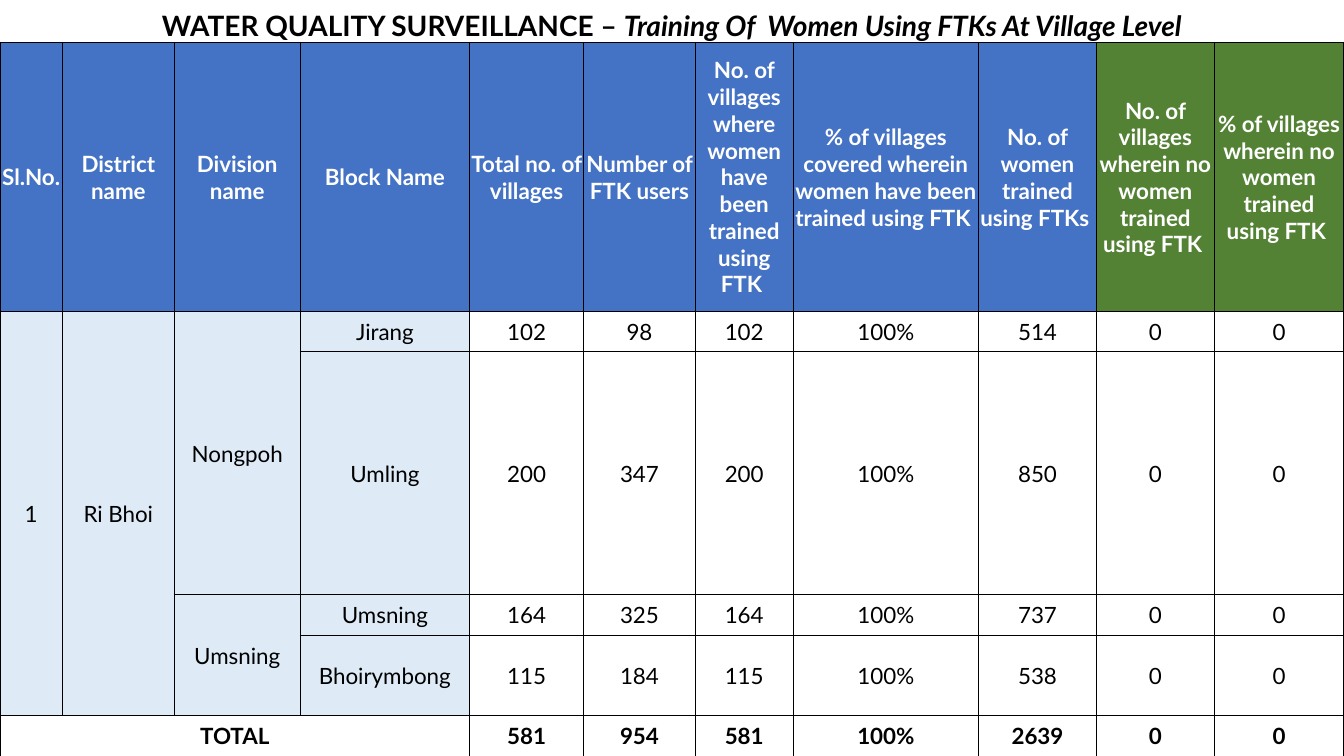
from lxml.etree import SubElement
from pptx import Presentation
from pptx.dml.color import RGBColor
from pptx.enum.text import MSO_ANCHOR, PP_ALIGN
from pptx.oxml.ns import qn
from pptx.util import Pt

FONT = "Lato"
BLACK, WHITE = "000000", "FFFFFF"
BLUE, GREEN, PALE_BLUE = "4472C4", "548235", "DEEBF7"

COLUMN_WIDTHS = [44.6, 79.9, 90, 121, 81.4, 79.9, 69.8, 132.5, 84.2, 84.2, 92.5]
ROW_HEIGHTS = [30.2, 192.2, 28.8, 173.5, 28.8, 57.7, 28.8]
TITLE_ROW, HEADER_ROW, FIRST_BLOCK_ROW, TOTAL_ROW = 0, 1, 2, 6
FIRST_FIGURE_COLUMN, FIRST_UNTRAINED_COLUMN = 4, 9

HEADERS = [
    "Sl.No.", "District name", "Division name", "Block Name",
    "Total no. of villages", "Number of FTK users",
    "No. of villages where women have been trained using FTK ",
    "% of villages covered wherein women have been trained using FTK ",
    "No. of women trained using FTKs ",
    "No. of villages wherein no women trained using FTK ",
    "% of villages wherein no women trained using FTK ",
]
BLOCKS = [
    ["1", "Ri Bhoi", "Nongpoh", "Jirang", "102", "98", "102", "100%", "514", "0", "0"],
    ["", "", "", "Umling", "200", "347", "200", "100%", "850", "0", "0"],
    ["", "", "Umsning", "Umsning", "164", "325", "164", "100%", "737", "0", "0"],
    ["", "", "", "Bhoirymbong", "115", "184", "115", "100%", "538", "0", "0"],
]
TOTALS = ["TOTAL", "", "", "", "581", "954", "581", "100%", "2639", "0", "0"]
# First and last cell of each merged area, as (row, column)
MERGED_AREAS = [
    ((0, 0), (0, 10)),
    ((2, 0), (5, 0)),
    ((2, 1), (5, 1)),
    ((2, 2), (3, 2)),
    ((4, 2), (5, 2)),
    ((6, 0), (6, 3)),
]


def rgb(color):
    return RGBColor.from_string(color)


def add_run(paragraph, text, size, color, bold=False, italic=False):
    run = paragraph.add_run()
    run.text = text
    font = run.font
    font.name, font.size = FONT, Pt(size)
    font.bold, font.italic = bold, italic
    font.color.rgb = rgb(color)


def add_borders(cell, sides):
    """Draw thin black lines on the given sides, listed in the order L, R, T, B."""
    properties = cell._tc.get_or_add_tcPr()
    for side in "LRTB":
        line = SubElement(properties, qn(f"a:ln{side}"), w=str(Pt(0.5)))
        if side in sides:
            fill = SubElement(line, qn("a:solidFill"))
            SubElement(fill, qn("a:srgbClr"), val=BLACK)
        else:
            SubElement(line, qn("a:noFill"))


def format_cell(cell, fill, sides="LRTB", anchor=MSO_ANCHOR.MIDDLE):
    """Apply borders before the fill, as the file format orders them."""
    add_borders(cell, sides)
    cell.fill.solid()
    cell.fill.fore_color.rgb = rgb(fill)
    cell.margin_left = cell.margin_right = cell.margin_top = Pt(0.7)
    cell.margin_bottom = Pt(0)
    cell.vertical_anchor = anchor
    cell.text_frame.paragraphs[0].alignment = PP_ALIGN.CENTER


def fill_title(table):
    for column in range(len(COLUMN_WIDTHS)):
        format_cell(table.cell(TITLE_ROW, column), WHITE, "B", MSO_ANCHOR.BOTTOM)
    title = table.cell(TITLE_ROW, 0).text_frame.paragraphs[0]
    add_run(title, "WATER QUALITY SURVEILLANCE – ", 20, BLACK, bold=True)
    add_run(title, "Training Of  Women Using FTKs At Village Level", 20, BLACK,
            bold=True, italic=True)


def fill_row(table, row, texts, left_fill, right_fill, split, color=BLACK, bold=False):
    """Fill one row; the cell colour changes at column number split."""
    for column, text in enumerate(texts):
        cell = table.cell(row, column)
        format_cell(cell, left_fill if column < split else right_fill)
        if text:
            add_run(cell.text_frame.paragraphs[0], text, 16, color, bold)


def add_training_table(slide):
    table = slide.shapes.add_table(
        len(ROW_HEIGHTS), len(COLUMN_WIDTHS), Pt(0), Pt(0), Pt(960), Pt(540)
    ).table
    table.first_row = table.horz_banding = False
    for column, width in zip(table.columns, COLUMN_WIDTHS):
        column.width = Pt(width)
    for row, height in zip(table.rows, ROW_HEIGHTS):
        row.height = Pt(height)
    for first, last in MERGED_AREAS:
        table.cell(*first).merge(table.cell(*last))
    return table


def main():
    presentation = Presentation()
    presentation.slide_width, presentation.slide_height = Pt(960), Pt(540)
    slide = presentation.slides.add_slide(presentation.slide_layouts[6])

    table = add_training_table(slide)
    fill_title(table)
    fill_row(table, HEADER_ROW, HEADERS, BLUE, GREEN, FIRST_UNTRAINED_COLUMN,
             WHITE, bold=True)
    for row, block in enumerate(BLOCKS, FIRST_BLOCK_ROW):
        fill_row(table, row, block, PALE_BLUE, WHITE, FIRST_FIGURE_COLUMN)
    fill_row(table, TOTAL_ROW, TOTALS, WHITE, WHITE, FIRST_FIGURE_COLUMN, bold=True)

    presentation.save("out.pptx")


if __name__ == "__main__":
    main()
